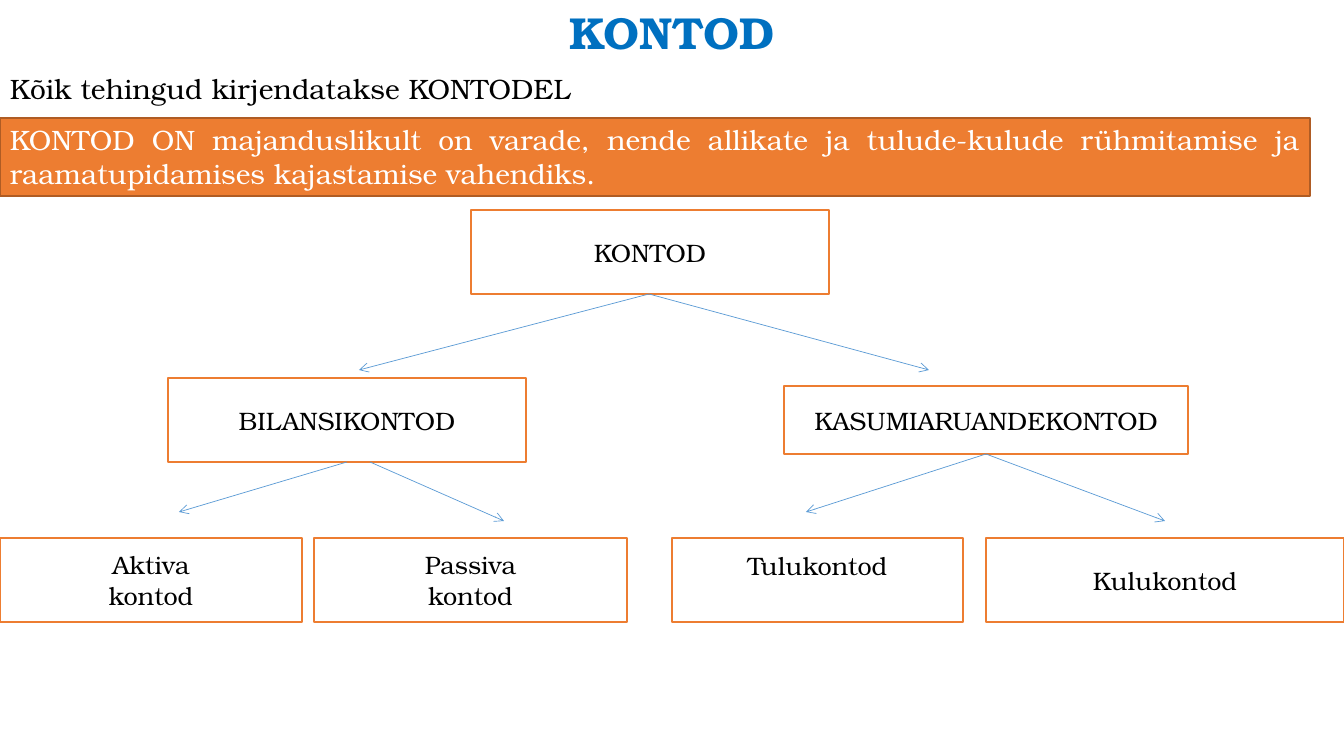
import pptx
import pptx.util
import pptx.dml.color
import pptx.enum.shapes
import pptx.enum.text
import lxml.etree

PX = 914400 / 100.8  # EMU per px
NS = "http://schemas.openxmlformats.org/drawingml/2006/main"
ALIGN = pptx.enum.text.PP_ALIGN
ANCHOR = pptx.enum.text.MSO_ANCHOR
RGB = pptx.dml.color.RGBColor.from_string
THEME = {
    "font": "TeX Gyre Bonum",
    "title": RGB("0070C0"), "text": RGB("000000"), "white": RGB("FFFFFF"),
    "orange": RGB("ED7D31"), "dark": RGB("AF5C24"), "arrow": RGB("5B9BD5"),
    "title_size": 32, "body_size": 20, "box_size": 18,
}


def px(*lengths):
    return [round(n * PX) for n in lengths]


def write(s, lines, size, color, align, anchor=ANCHOR.TOP, wrap=True, bold=False):
    tf = s.text_frame
    tf.word_wrap = wrap
    tf.vertical_anchor = anchor
    for i, line in enumerate(lines):
        p = tf.add_paragraph() if i else tf.paragraphs[0]
        p.alignment = align
        r = p.add_run()
        r.text = line
        r.font.name = THEME["font"]
        r.font.size = pptx.util.Pt(THEME[size])
        r.font.bold = bold
        r.font.color.rgb = THEME[color]


prs = pptx.Presentation()
prs.slide_width, prs.slide_height = px(1344, 756)
slide = prs.slides.add_slide(prs.slide_layouts[5])

# Title
title = slide.shapes.title
title.left, title.top, title.width, title.height = px(0, 0, 1344, 64)
write(title, ["KONTOD"], "title_size", "title", ALIGN.CENTER, bold=True)

# Lead sentence
lead = slide.shapes.add_textbox(*px(0, 67, 585, 44))
write(lead, ["Kõik tehingud kirjendatakse KONTODEL"], "body_size", "text", ALIGN.LEFT, wrap=False)

# Definition banner and account tree: box, fill, line, text
banner = ["KONTOD ON majanduslikult on varade, nende allikate ja tulude-kulude "
          "rühmitamise ja raamatupidamises kajastamise vahendiks."]
boxes = [
    ((0, 118, 1310, 78), banner),
    ((471, 210, 358, 84), ["KONTOD"]),
    ((168, 378, 358, 84), ["BILANSIKONTOD"]),
    ((784, 386, 404, 68), ["KASUMIARUANDEKONTOD"]),
    ((0, 538, 302, 84), ["Aktiva", "kontod"]),
    ((314, 538, 313, 84), ["Passiva", "kontod"]),
    ((672, 538, 291, 84), ["Tulukontod"]),
    ((986, 538, 358, 84), ["Kulukontod"]),
]
for place, lines in boxes:
    s = slide.shapes.add_shape(pptx.enum.shapes.MSO_SHAPE.RECTANGLE, *px(*place))
    s.shadow.inherit = False
    s.fill.solid()
    s.fill.fore_color.rgb = THEME["orange" if lines is banner else "white"]
    s.line.color.rgb = THEME["dark" if lines is banner else "orange"]
    s.line.width = pptx.util.Pt(1)
    if lines is banner:
        write(s, lines, "body_size", "white", ALIGN.JUSTIFY)
    elif lines == ["Tulukontod"]:  # sits level with the first line of its neighbours
        write(s, lines, "box_size", "text", ALIGN.CENTER)
        s.text_frame.margin_top = px(12)[0]
    else:
        write(s, lines, "box_size", "text", ALIGN.CENTER, ANCHOR.MIDDLE)

# Arrows from each account group to its parts
arrows = [
    (649, 294, 359, 370), (649, 294, 929, 370),
    (347, 462, 179, 512), (370, 462, 504, 521),
    (986, 454, 806, 512), (986, 454, 1165, 521),
]
for ends in arrows:
    s = slide.shapes.add_connector(pptx.enum.shapes.MSO_CONNECTOR.STRAIGHT, *px(*ends))
    s.line.color.rgb = THEME["arrow"]
    s.line.width = pptx.util.Pt(0.5)
    lxml.etree.SubElement(s.line._get_or_add_ln(), f"{{{NS}}}tailEnd", type="arrow")
    lxml.etree.SubElement(s._element.spPr, f"{{{NS}}}effectLst")

prs.save("out.pptx")
